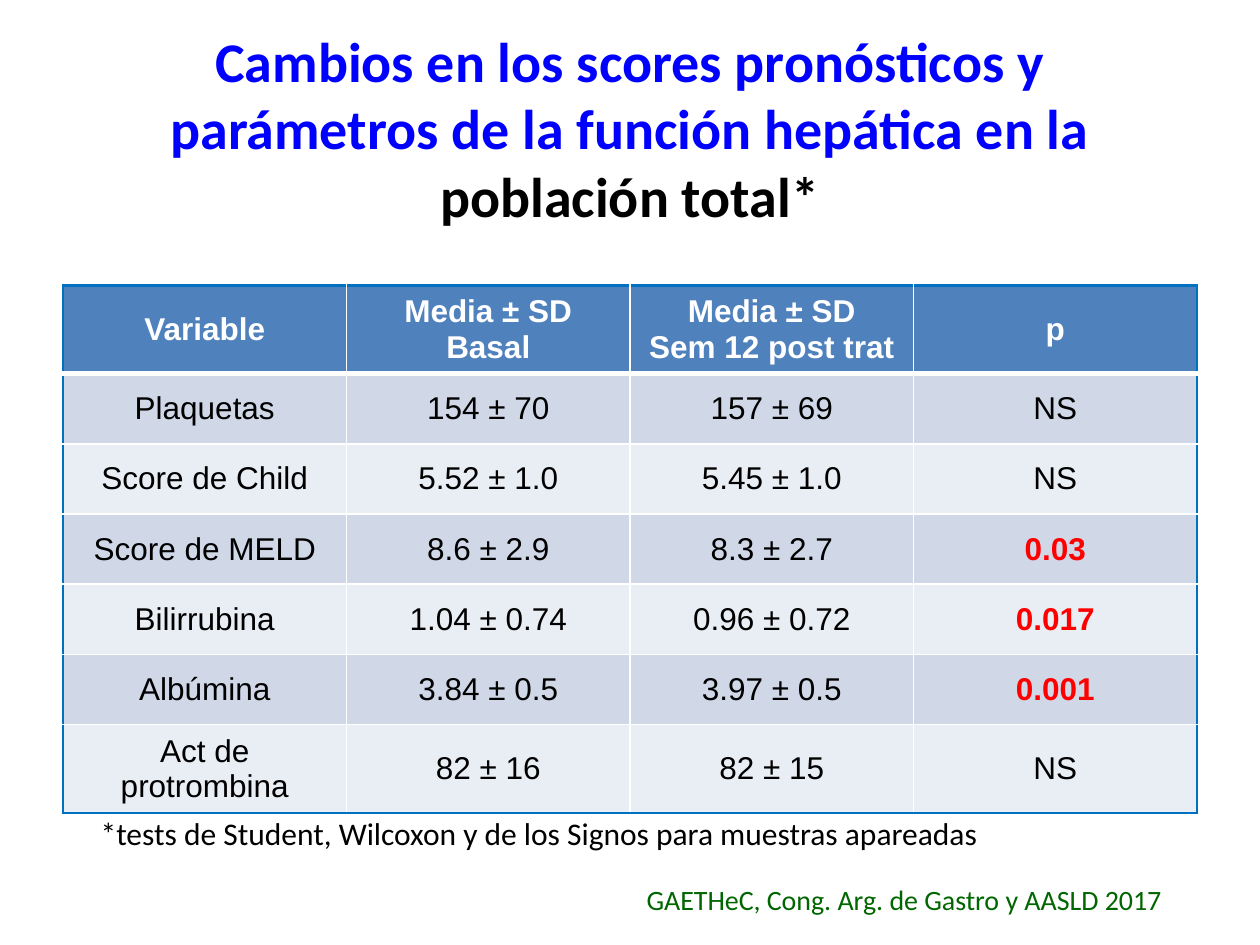
import lxml.etree
import pptx
import pptx.dml.color
import pptx.enum.text
import pptx.oxml.ns
import pptx.util

RGBColor = pptx.dml.color.RGBColor
ALIGN = pptx.enum.text.PP_ALIGN
MIDDLE = pptx.enum.text.MSO_ANCHOR.MIDDLE
TOP = pptx.enum.text.MSO_ANCHOR.TOP

BLUE = RGBColor(0x00, 0x00, 0xFF)
BLACK = RGBColor(0x00, 0x00, 0x00)
WHITE = RGBColor(0xFF, 0xFF, 0xFF)
RED = RGBColor(0xFF, 0x00, 0x00)
GREEN = RGBColor(0x00, 0x66, 0x00)
HEADER_FILL = RGBColor(0x4F, 0x81, 0xBD)
BAND_FILLS = (RGBColor(0xE9, 0xED, 0xF4), RGBColor(0xD0, 0xD8, 0xE8))
FRAME = RGBColor(0x00, 0x70, 0xC0)

ROWS = [
    ("Variable", "Media ± SD\nBasal", "Media ± SD\nSem 12 post trat", "p"),
    ("Plaquetas", "154 ± 70", "157 ± 69", "NS"),
    ("Score de Child", "5.52 ± 1.0", "5.45 ± 1.0", "NS"),
    ("Score de MELD", "8.6 ± 2.9", "8.3 ± 2.7", "0.03"),
    ("Bilirrubina", "1.04 ± 0.74", "0.96 ± 0.72", "0.017"),
    ("Albúmina", "3.84 ± 0.5", "3.97 ± 0.5", "0.001"),
    ("Act de protrombina", "82 ± 16", "82 ± 15", "NS"),
]


def write(frame, text, size=18, font="Calibri", color=BLACK, bold=False,
          align=ALIGN.LEFT, anchor=TOP):
    """Fill a text frame, one paragraph a line, and return the last paragraph."""
    frame.word_wrap = True
    frame.vertical_anchor = anchor
    frame.text = text
    for para in frame.paragraphs:
        para.alignment = align
        for span in para.runs:
            span.font.size = pptx.util.Pt(size)
            span.font.name = font
            span.font.color.rgb = color
            span.font.bold = bold
    return para


def add_border(cell, side, color, points):
    properties = cell._tc.get_or_add_tcPr()
    line = lxml.etree.SubElement(properties, pptx.oxml.ns.qn(f"a:ln{side}"),
                                 w=str(pptx.util.Pt(points)))
    fill = lxml.etree.SubElement(line, pptx.oxml.ns.qn("a:solidFill"))
    lxml.etree.SubElement(fill, pptx.oxml.ns.qn("a:srgbClr"), val=str(color))


deck = pptx.Presentation()
deck.slide_width = pptx.util.Inches(10)
deck.slide_height = pptx.util.Inches(7.5)
column = deck.slide_width // 100
row = deck.slide_height // 100
page = deck.slides.add_slide(deck.slide_layouts[6])

# Title
title = page.shapes.add_textbox(5 * column, int(6.3 * row), 90 * column, int(14.4 * row))
title.text_frame.margin_left = title.text_frame.margin_right = int(1.5 * column)
para = write(title.text_frame,
             "Cambios en los scores pronósticos y parámetros de la función hepática en la ",
             size=32, color=BLUE, bold=True, align=ALIGN.CENTER, anchor=MIDDLE)
span = para.add_run()
span.text = "población total*"
span.font.size = pptx.util.Pt(32)
span.font.name = "Calibri"
span.font.color.rgb = BLACK
span.font.bold = True

# Results table
last_row, last_column = len(ROWS) - 1, len(ROWS[0]) - 1
row_height = int(7.43 * row)
table = page.shapes.add_table(len(ROWS), len(ROWS[0]), 5 * column, int(30.2 * row),
                              90 * column, row_height * len(ROWS)).table
for r, values in enumerate(ROWS):
    table.rows[r].height = row_height
    header = r == 0
    for c, value in enumerate(values):
        cell = table.cell(r, c)
        significant = c == last_column and value.startswith("0")
        write(cell.text_frame, value, font="Arial", bold=header or significant,
              color=WHITE if header else RED if significant else BLACK,
              align=ALIGN.CENTER)
        cell.vertical_anchor = MIDDLE
        edges = {"L": c == 0, "R": c == last_column, "T": header, "B": r == last_row}
        for side, outer in edges.items():
            under_header = (r, side) in ((0, "B"), (1, "T"))
            add_border(cell, side, FRAME if outer else WHITE,
                       1.5 if outer else 3 if under_header else 1)
        cell.fill.solid()
        cell.fill.fore_color.rgb = HEADER_FILL if header else BAND_FILLS[r % 2]

# Footnote and source
footnote = page.shapes.add_textbox(7 * column, int(85.5 * row), int(87.5 * column), int(5.3 * row))
write(footnote.text_frame,
      "*tests de Student, Wilcoxon y de los Signos para muestras apareadas")
source = page.shapes.add_textbox(int(49.2 * column), int(92.7 * row), int(44.5 * column), 5 * row)
write(source.text_frame, "GAETHeC, Cong. Arg. de Gastro y AASLD 2017 ",
      size=16, color=GREEN, align=ALIGN.RIGHT)

deck.save("out.pptx")
